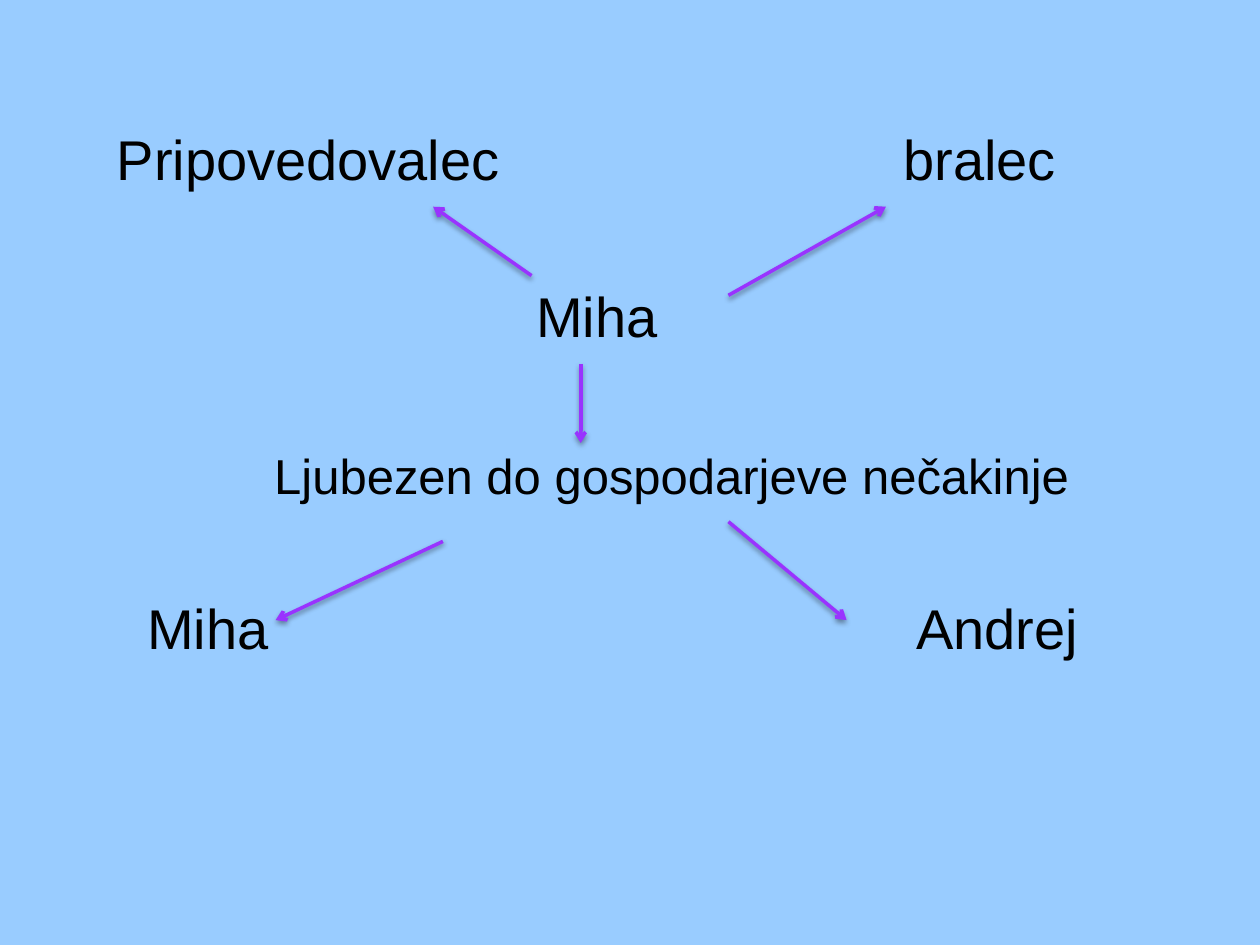
from lxml.etree import SubElement
from pptx import Presentation
from pptx.dml.color import RGBColor as Color
from pptx.enum.shapes import MSO_CONNECTOR as Connector
from pptx.oxml.ns import qn
from pptx.util import Inches, Pt

COLORS = {"background": "99CCFF", "text": "000000", "arrow": "9933FF", "shadow": "000000"}
FONT = "Arial"
COLUMNS, ROWS = 128, 96  # fine grid over the whole slide


class StorySlide:
    def __init__(self, presentation):
        self.width, self.height = presentation.slide_width, presentation.slide_height
        self.slide = presentation.slides.add_slide(presentation.slide_layouts[6])
        fill = self.slide.background.fill
        fill.solid()
        fill.fore_color.rgb = Color.from_string(COLORS["background"])

    def point(self, column, row):
        return round(self.width * column / COLUMNS), round(self.height * row / ROWS)

    def set_format(self, target, values):
        for name, value in values.items():
            setattr(target, name, value)

    def text(self, left, top, width, height, lines):
        """Add lines of (labels with tab columns, size, space before)."""
        box = self.slide.shapes.add_textbox(*self.point(left, top), *self.point(width, height))
        frame = box.text_frame
        frame.word_wrap = True
        for index, (labels, size, space) in enumerate(lines):
            paragraph = frame.add_paragraph() if index else frame.paragraphs[0]
            properties = paragraph._p.get_or_add_pPr()
            tabs = SubElement(properties, qn("a:tabLst"))
            for column, _ in labels:
                SubElement(tabs, qn("a:tab"), pos=str(self.point(column, 0)[0]), algn="l")
            paragraph.space_before = Pt(space)
            run = paragraph.add_run()
            run.text = "".join("\t" + label for _, label in labels)
            self.set_format(run.font, {"name": FONT, "size": Pt(size)})
            run.font.color.rgb = Color.from_string(COLORS["text"])

    def arrow(self, start, end):
        connector = self.slide.shapes.add_connector(
            Connector.STRAIGHT, *self.point(*start), *self.point(*end))
        connector.line.width = Pt(2)
        connector.line.color.rgb = Color.from_string(COLORS["arrow"])
        properties = connector._element.spPr
        SubElement(properties.find(qn("a:ln")), qn("a:tailEnd"), type="arrow")
        # Soft shadow straight below the line
        effects = SubElement(properties, qn("a:effectLst"))
        shadow = SubElement(effects, qn("a:outerShdw"), blurRad=str(Pt(3.1)),
                            dist=str(Pt(1.6)), dir="5400000", rotWithShape="0")
        color = SubElement(shadow, qn("a:srgbClr"), val=COLORS["shadow"])
        SubElement(color, qn("a:alpha"), val="38000")


def main():
    presentation = Presentation()
    presentation.slide_width, presentation.slide_height = Inches(10), Inches(7.5)
    story = StorySlide(presentation)

    # Characters and the theme that links them
    story.text(9, 12, 115, 63.5, [
        ([(1.6, "Pripovedovalec"), (81.5, "bralec")], 32, 0),
        ([(44.2, "Miha")], 32, 51.3),
        ([(17.6, "Ljubezen do gospodarjeve nečakinje")], 28, 55.3),
        ([(4.7, "Miha"), (82.8, "Andrej")], 32, 51.3),
    ])

    # Arrows, as (column, row) of start and end
    for start, end in [
        ((54, 28), (44, 21)),
        ((74, 30), (90, 21)),
        ((45, 55), (28, 63)),
        ((59, 37), (59, 45)),
        ((74, 53), (86, 63)),
    ]:
        story.arrow(start, end)

    presentation.save("out.pptx")


if __name__ == "__main__":
    main()
